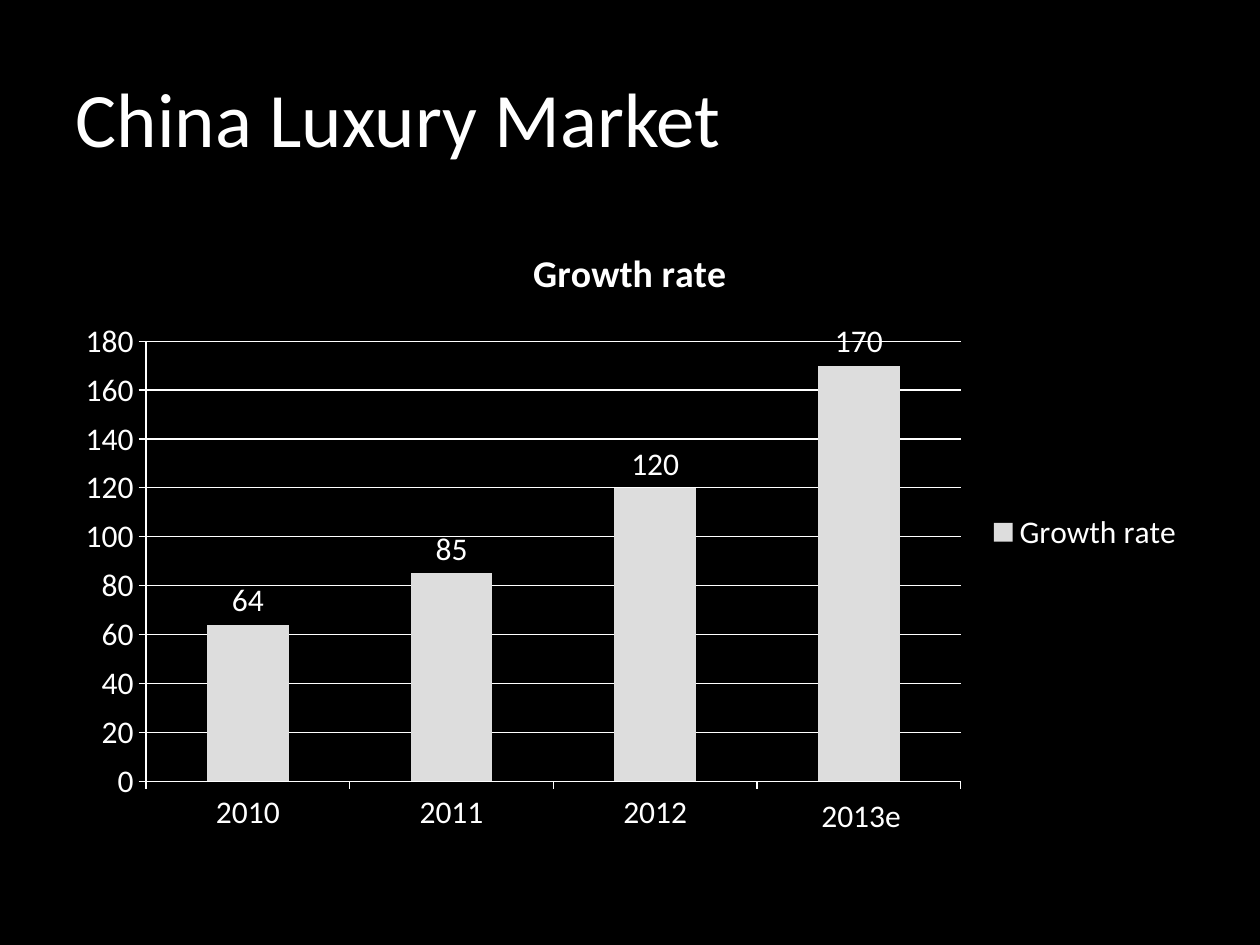
from pptx import Presentation
from pptx.chart.data import CategoryChartData
from pptx.dml.color import RGBColor
from pptx.enum.chart import XL_CHART_TYPE, XL_LABEL_POSITION, XL_LEGEND_POSITION, XL_TICK_MARK
from pptx.enum.text import MSO_ANCHOR, PP_ALIGN
from pptx.util import Inches, Pt

BLACK = RGBColor(0x00, 0x00, 0x00)
WHITE = RGBColor(0xFF, 0xFF, 0xFF)
LIGHT_GREY = RGBColor(0xDD, 0xDD, 0xDD)
COLUMNS = XL_CHART_TYPE.COLUMN_CLUSTERED
OUTSIDE_END = XL_LABEL_POSITION.OUTSIDE_END
LEGEND_RIGHT = XL_LEGEND_POSITION.RIGHT
TICK_OUT = XL_TICK_MARK.OUTSIDE
TICK_NONE = XL_TICK_MARK.NONE
MIDDLE = MSO_ANCHOR.MIDDLE
LEFT = PP_ALIGN.LEFT
TITLE_ONLY = 5


class SlideBuilder:
    font_name = "Calibri"
    body_size = 18

    def __init__(self, deck):
        self.slide = deck.slides.add_slide(deck.slide_layouts[TITLE_ONLY])
        fill = self.slide.background.fill
        fill.solid()
        fill.fore_color.rgb = BLACK

    def style_font(self, font, size=body_size, bold=False):
        font.name = self.font_name
        font.size = Pt(size)
        font.bold = bold
        font.color.rgb = WHITE

    def set_text(self, frame, text, size=body_size):
        frame.text = text
        para = frame.paragraphs[0]
        para.alignment = LEFT
        self.style_font(para.runs[0].font, size)

    def title(self, text, left, top, width, height):
        box = self.slide.shapes.title
        box.left, box.top = Inches(left), Inches(top)
        box.width, box.height = Inches(width), Inches(height)
        box.text_frame.vertical_anchor = MIDDLE
        self.set_text(box.text_frame, text, 44)

    def label(self, text, left, top, width, height):
        box = self.slide.shapes.add_textbox(
            Inches(left), Inches(top), Inches(width), Inches(height))
        box.text_frame.word_wrap = True
        self.set_text(box.text_frame, text)

    def column_chart(self, name, categories, values, left, top, width, height):
        data = CategoryChartData()
        data.categories = categories
        data.add_series(name, values)
        chart = self.slide.shapes.add_chart(
            COLUMNS, Inches(left), Inches(top), Inches(width), Inches(height), data).chart
        self.style_font(chart.font)

        # Chart title and legend
        chart.has_title = True
        heading = chart.chart_title
        heading.include_in_layout = False
        heading.text_frame.text = name
        self.style_font(heading.text_frame.paragraphs[0].runs[0].font, 21.6, bold=True)
        chart.has_legend = True
        chart.legend.position = LEGEND_RIGHT
        chart.legend.include_in_layout = False

        # Axes and gridlines
        for axis in (chart.category_axis, chart.value_axis):
            axis.major_tick_mark = TICK_OUT
            axis.minor_tick_mark = TICK_NONE
            axis.format.line.color.rgb = WHITE
        chart.value_axis.has_major_gridlines = True
        chart.value_axis.major_gridlines.format.line.color.rgb = WHITE

        # Columns and their values
        plot = chart.plots[0]
        plot.gap_width = 150
        plot.vary_by_categories = False
        series = plot.series[0]
        series.format.fill.solid()
        series.format.fill.fore_color.rgb = LIGHT_GREY
        labels = series.data_labels
        labels.show_value = True
        labels.position = OUTSIDE_END
        self.style_font(labels.font)


def main():
    deck = Presentation()
    deck.slide_width, deck.slide_height = Inches(10), Inches(7.5)
    builder = SlideBuilder(deck)
    builder.title("China Luxury Market", 0.5, 0.3, 9, 1.25)
    # The last column is named by a text label below the axis
    builder.column_chart("Growth rate", ["2010", "2011", "2012", ""],
                         [64, 85, 120, 170], 0.5, 1.75, 9, 4.95)
    builder.label("2013e", 6.42, 6.27, 1.81, 0.4)
    deck.save("out.pptx")


if __name__ == "__main__":
    main()
